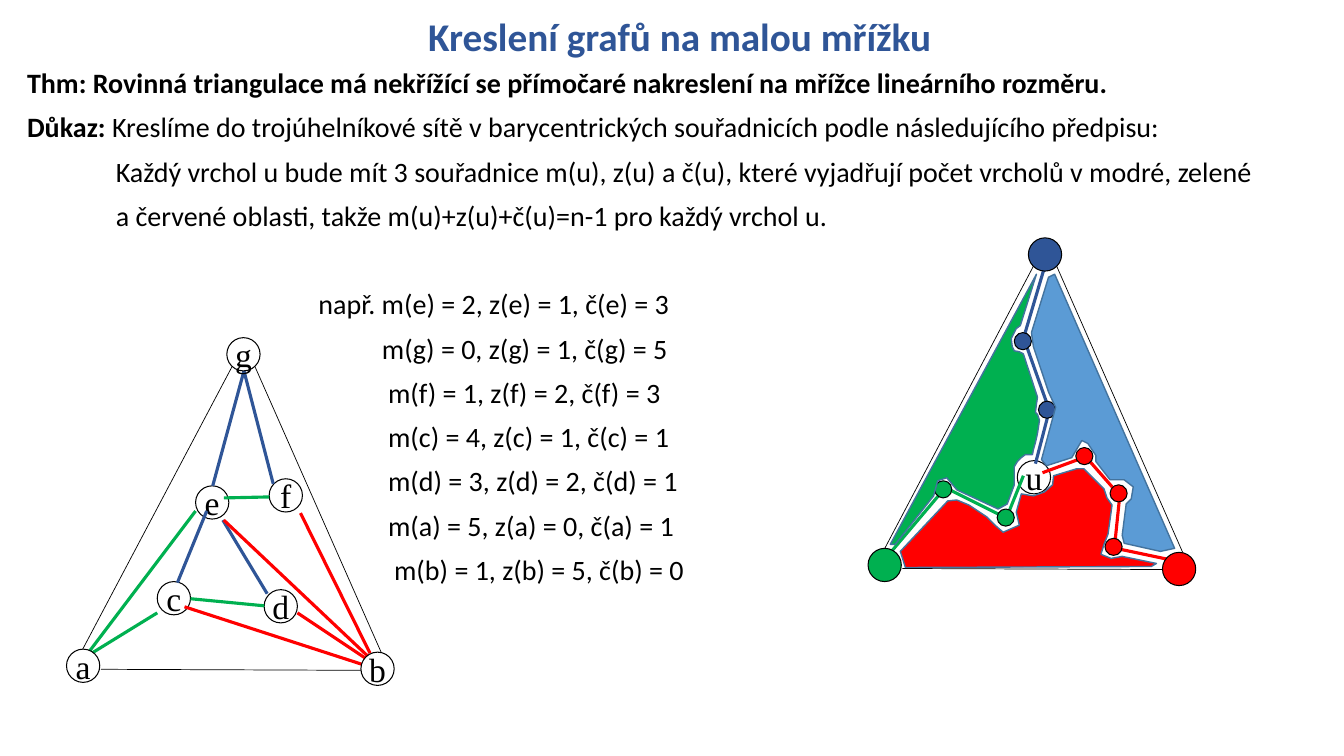
from dataclasses import dataclass

import pptx
import pptx.dml.color
import pptx.enum.shapes
import pptx.enum.text
import pptx.oxml.ns
import pptx.slide
import pptx.text.text
import pptx.util
from lxml import etree

RGBColor = pptx.dml.color.RGBColor
BLACK = RGBColor(0x00, 0x00, 0x00)
WHITE = RGBColor(0xFF, 0xFF, 0xFF)
NAVY = RGBColor(0x2F, 0x55, 0x97)
GREEN = RGBColor(0x00, 0xB0, 0x50)
RED = RGBColor(0xFF, 0x00, 0x00)
SKY = RGBColor(0x5B, 0x9B, 0xD5)
STEEL = RGBColor(0x43, 0x73, 0x9E)

EMU_PER_PX = 9144  # 100 px to the inch
VERTEX_SIZE = 33
DOT_SIZE = 17
SIDE_WIDTH = 0.5
EDGE_WIDTH = 2.25


@dataclass(frozen=True)
class Node:
    left: int
    top: int
    size: int = VERTEX_SIZE
    fill: RGBColor = WHITE
    label: str = ""


@dataclass(frozen=True)
class Edges:
    color: RGBColor
    width: float
    ends: list[tuple[int, int, int, int]]


@dataclass(frozen=True)
class Region:
    fill: RGBColor
    corners: list[tuple[int, int]]


@dataclass(frozen=True)
class Line:
    """A line of body text: a bold lead, the rest, its indent in px and the points above it."""
    lead: str
    rest: str
    indent: int = 0
    space_before: float = 10


LINES = [
    Line("Thm: Rovinná triangulace má nekřížící se přímočaré nakreslení na mřížce "
         "lineárního rozměru.", ""),
    Line("Důkaz: ", "Kreslíme do trojúhelníkové sítě v barycentrických souřadnicích "
         "podle následujícího předpisu:"),
    Line("", "Každý vrchol u bude mít 3 souřadnice m(u), z(u) a č(u), které vyjadřují "
         "počet vrcholů v modré, zelené", 88),
    Line("", "a červené oblasti, takže m(u)+z(u)+č(u)=n-1 pro každý vrchol u.", 88),
    Line("", "např. m(e) = 2, z(e) = 1, č(e) = 3", 289, 41.6),
    Line("", "m(g) = 0, z(g) = 1, č(g) = 5", 352),
    Line("", "m(f) = 1, z(f) = 2, č(f) = 3", 358),
    Line("", "m(c) = 4, z(c) = 1, č(c) = 1", 358),
    Line("", "m(d) = 3, z(d) = 2, č(d) = 1", 358),
    Line("", "m(a) = 5, z(a) = 0, č(a) = 1", 358),
    Line("", "m(b) = 1, z(b) = 5, č(b) = 0", 364),
]

INNER_NODES = [
    Node(156, 577, label="c"), Node(194, 482, label="e"), Node(267, 475, label="f"),
    Node(262, 585, label="d"), Node(1009, 457, label="u"),
]

EXAMPLE_EDGES = [
    Edges(GREEN, EDGE_WIDTH, [(156, 608, 91, 648), (189, 594, 262, 601),
                              (222, 494, 267, 493), (194, 507, 85, 651)]),
    Edges(NAVY, EDGE_WIDTH, [(205, 507, 176, 578), (221, 516, 265, 589),
                             (211, 482, 242, 368), (271, 480, 242, 368)]),
    Edges(RED, EDGE_WIDTH, [(295, 608, 364, 654), (367, 648, 298, 509),
                            (183, 602, 362, 660), (222, 516, 367, 653)]),
    Edges(BLACK, SIDE_WIDTH, [(81, 646, 230, 364), (378, 647, 253, 364),
                              (100, 664, 358, 665)]),
]

REGION_EDGES = [
    Edges(GREEN, EDGE_WIDTH, [(996, 513, 934, 482), (997, 517, 1015, 472),
                              (934, 488, 880, 552)]),
    Edges(RED, EDGE_WIDTH, [(1102, 543, 1159, 555), (1105, 546, 1111, 488),
                            (1034, 469, 1080, 452), (1075, 451, 1110, 491)]),
    Edges(NAVY, EDGE_WIDTH, [(1017, 340, 1039, 402), (1041, 406, 1027, 460),
                             (1015, 336, 1036, 265)]),
    Edges(BLACK, SIDE_WIDTH, [(876, 547, 1025, 264), (1173, 548, 1048, 264),
                              (895, 564, 1153, 565)]),
]

CORNER_NODES = [
    Node(225, 335, label="g"), Node(66, 644, label="a"), Node(358, 647, label="b"),
    Node(1020, 236, fill=NAVY), Node(861, 544, fill=GREEN), Node(1153, 548, fill=RED),
]

PATH_DOTS = [
    Node(left, top, DOT_SIZE, color)
    for color, places in (
        (NAVY, [(1006, 330), (1030, 398)]),
        (RED, [(1067, 444), (1101, 481), (1096, 534)]),
        (GREEN, [(989, 505), (927, 477)]),
    )
    for left, top in places
]

REGIONS = [
    Region(SKY, [
        (1046, 272), (1040, 275), (1023, 330), (1025, 344), (1040, 389), (1047, 404),
        (1033, 456), (1038, 462), (1063, 454), (1073, 437), (1079, 440), (1087, 452),
        (1087, 458), (1101, 476), (1115, 476), (1124, 483), (1122, 495), (1117, 500),
        (1113, 531), (1115, 539), (1151, 547), (1165, 544)]),
    Region(RED, [
        (893, 547), (940, 497), (949, 496), (961, 501), (979, 513), (988, 522),
        (995, 528), (1011, 521), (1008, 508), (1013, 490), (1025, 492), (1036, 488),
        (1044, 481), (1045, 472), (1068, 465), (1075, 465), (1095, 485), (1098, 494),
        (1103, 501), (1099, 530), (1095, 540), (1092, 550), (1102, 554), (1113, 552),
        (1147, 559), (1142, 562), (898, 563)]),
    Region(GREEN, [
        (1028, 272), (1012, 323), (1008, 326), (1005, 332), (1003, 336), (1004, 344),
        (1006, 348), (1011, 349), (1015, 351), (1029, 394), (1028, 401), (1027, 409),
        (1029, 411), (1031, 417), (1029, 430), (1027, 439), (1025, 446), (1024, 451),
        (1017, 451), (1013, 454), (1009, 458), (1006, 463), (1006, 481), (999, 500),
        (990, 505), (949, 486), (939, 474), (930, 477), (926, 492), (888, 540),
        (883, 540)]),
]


def px(length: int) -> pptx.util.Emu:
    return pptx.util.Emu(length * EMU_PER_PX)


def style_run(span: pptx.text.text._Run, font: str, size: int,
              color: RGBColor = BLACK, bold: bool = False) -> None:
    span.font.name = font
    span.font.size = pptx.util.Pt(size)
    span.font.color.rgb = color
    span.font.bold = bold


def add_title(page: pptx.slide.Slide) -> None:
    box = page.shapes.add_textbox(px(174), px(3), px(1000), px(61))
    frame = box.text_frame
    frame.word_wrap = True
    frame.vertical_anchor = pptx.enum.text.MSO_ANCHOR.BOTTOM
    frame.text = "Kreslení grafů na malou mřížku"
    para = frame.paragraphs[0]
    para.alignment = pptx.enum.text.PP_ALIGN.CENTER
    para.line_spacing = 0.9
    style_run(para.runs[0], "Calibri", 28, NAVY, True)


def add_body(page: pptx.slide.Slide) -> None:
    frame = page.shapes.add_textbox(px(17), px(64), px(1299), px(672)).text_frame
    frame.word_wrap = True
    for number, line in enumerate(LINES):
        para = frame.add_paragraph() if number else frame.paragraphs[0]
        para.line_spacing = 0.9
        para.space_before = pptx.util.Pt(line.space_before)
        para._p.get_or_add_pPr().set("marL", str(px(line.indent)))
        for words, bold in ((line.lead, True), (line.rest, False)):
            if words:
                span = para.add_run()
                span.text = words
                style_run(span, "Calibri", 20, bold=bold)


def add_node(page: pptx.slide.Slide, node: Node) -> None:
    circle = page.shapes.add_shape(pptx.enum.shapes.MSO_SHAPE.OVAL, px(node.left),
                                   px(node.top), px(node.size), px(node.size))
    circle.shadow.inherit = False
    circle.fill.solid()
    circle.fill.fore_color.rgb = node.fill
    circle.line.color.rgb = BLACK
    circle.line.width = pptx.util.Pt(0.75)
    if node.label:
        frame = circle.text_frame
        frame.word_wrap = False
        frame.vertical_anchor = pptx.enum.text.MSO_ANCHOR.MIDDLE
        frame.text = node.label
        frame.paragraphs[0].alignment = pptx.enum.text.PP_ALIGN.CENTER
        style_run(frame.paragraphs[0].runs[0], "Times New Roman", 24)


def add_edges(page: pptx.slide.Slide, edges: Edges) -> None:
    for ends in edges.ends:
        edge = page.shapes.add_connector(pptx.enum.shapes.MSO_CONNECTOR.STRAIGHT,
                                         *map(px, ends))
        edge.line.color.rgb = edges.color
        edge.line.width = pptx.util.Pt(edges.width)
        etree.SubElement(edge._element.spPr, pptx.oxml.ns.qn("a:effectLst"))


def add_region(page: pptx.slide.Slide, region: Region) -> None:
    start, *others = region.corners
    builder = page.shapes.build_freeform(*start, scale=EMU_PER_PX)
    builder.add_line_segments(others, close=True)
    area = builder.convert_to_shape()
    area.shadow.inherit = False
    area.fill.solid()
    area.fill.fore_color.rgb = region.fill
    area.line.color.rgb = STEEL
    area.line.width = pptx.util.Pt(1)


def main() -> None:
    deck = pptx.Presentation()
    deck.slide_width, deck.slide_height = px(1333), px(750)
    page = deck.slides.add_slide(deck.slide_layouts[6])
    add_title(page)
    add_body(page)
    for node in INNER_NODES:
        add_node(page, node)
    for edges in EXAMPLE_EDGES + REGION_EDGES:
        add_edges(page, edges)
    for node in CORNER_NODES + PATH_DOTS:
        add_node(page, node)
    for region in REGIONS:
        add_region(page, region)
    deck.save("out.pptx")


if __name__ == "__main__":
    main()
